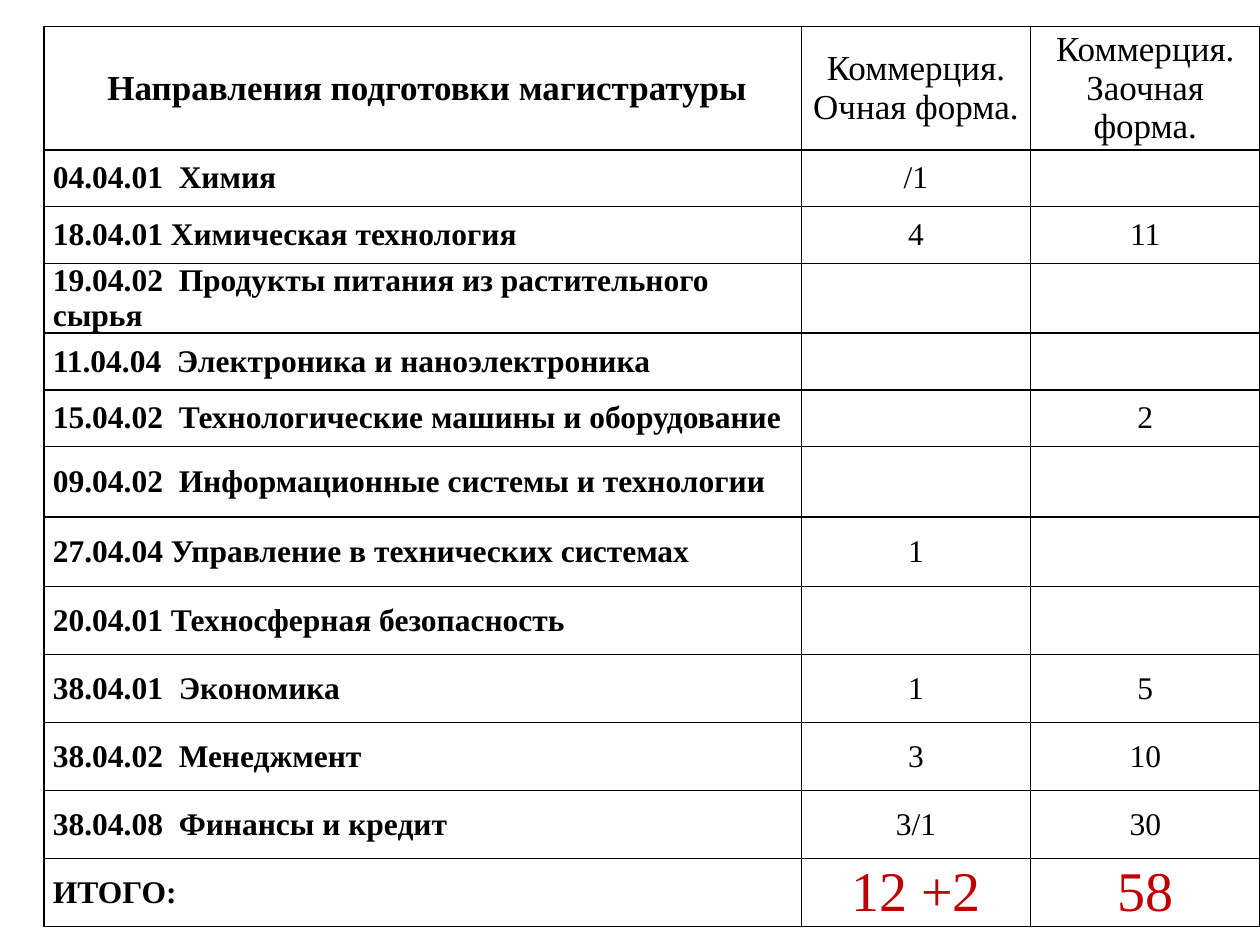
from lxml.etree import SubElement
from pptx import Presentation
from pptx.dml.color import RGBColor
from pptx.enum.text import MSO_ANCHOR, PP_ALIGN
from pptx.oxml.ns import qn
from pptx.util import Inches, Pt

COLORS = {"text": "000000", "border": "000000", "total": "C00000", "paper": "FFFFFF"}
FONT = "Times New Roman"
COLUMN_WIDTHS = [6.01, 1.82, 1.82]
ROW_HEIGHTS = [0.98] + [0.45] * 5 + [0.56, 0.55] + [0.54] * 5

HEADER = [" Направления подготовки магистратуры",
          "Коммерция.\nОчная форма.", "Коммерция.\nЗаочная форма."]
PROGRAMS = [
    ("04.04.01  Химия", "/1", ""),
    ("18.04.01 Химическая технология", "4", "11"),
    ("19.04.02  Продукты питания из растительного сырья", "", ""),
    ("11.04.04  Электроника и наноэлектроника", "", ""),
    ("15.04.02  Технологические машины и оборудование", "", "2"),
    ("09.04.02  Информационные системы и технологии", "", ""),
    ("27.04.04 Управление в технических системах", "1", ""),
    ("20.04.01 Техносферная безопасность", "", ""),
    ("38.04.01  Экономика", "1", "5"),
    ("38.04.02  Менеджмент", "3", "10"),
    ("38.04.08  Финансы и кредит", "3/1", "30"),
]
TOTAL = ["ИТОГО:", "12 +2", "58"]


def write_text(cell, text, size=18, bold=False, color="text", align=PP_ALIGN.CENTER):
    cell.text_frame.text = text
    for paragraph in cell.text_frame.paragraphs:
        paragraph.alignment = align
        for run in paragraph.runs:
            run.font.name = FONT
            run.font.size = Pt(size)
            run.font.bold = bold
            run.font.color.rgb = RGBColor.from_string(COLORS[color])


def style_cell(cell):
    cell.vertical_anchor = MSO_ANCHOR.MIDDLE
    cell.margin_left = cell.margin_right = Inches(0.07)
    cell.margin_top = cell.margin_bottom = 0
    # Borders must come before the fill in the cell properties
    properties = cell._tc.get_or_add_tcPr()
    for side in ("a:lnL", "a:lnR", "a:lnT", "a:lnB"):
        line = SubElement(properties, qn(side), w=str(Pt(1)))
        fill = SubElement(line, qn("a:solidFill"))
        SubElement(fill, qn("a:srgbClr"), val=COLORS["border"])
    cell.fill.solid()
    cell.fill.fore_color.rgb = RGBColor.from_string(COLORS["paper"])


def add_admission_table(slide):
    rows = [HEADER, *PROGRAMS, TOTAL]
    table = slide.shapes.add_table(
        len(rows), len(COLUMN_WIDTHS), Inches(0.35), Inches(0.21),
        Inches(sum(COLUMN_WIDTHS)), Inches(sum(ROW_HEIGHTS))).table
    for column, width in zip(table.columns, COLUMN_WIDTHS):
        column.width = Inches(width)
    for row, height in zip(table.rows, ROW_HEIGHTS):
        row.height = Inches(height)

    for row_index, texts in enumerate(rows):
        for column_index, text in enumerate(texts):
            cell = table.cell(row_index, column_index)
            style_cell(cell)
            text_format = {"bold": column_index == 0}
            if texts is HEADER:
                text_format["size"] = 20
            elif column_index == 0:
                text_format["align"] = PP_ALIGN.LEFT
            elif texts is TOTAL:
                text_format.update(size=32, color="total")
            write_text(cell, text, **text_format)


def main():
    presentation = Presentation()
    presentation.slide_width = Inches(10)
    presentation.slide_height = Inches(7.5)
    slide = presentation.slides.add_slide(presentation.slide_layouts[6])
    add_admission_table(slide)
    presentation.save("out.pptx")


if __name__ == "__main__":
    main()
